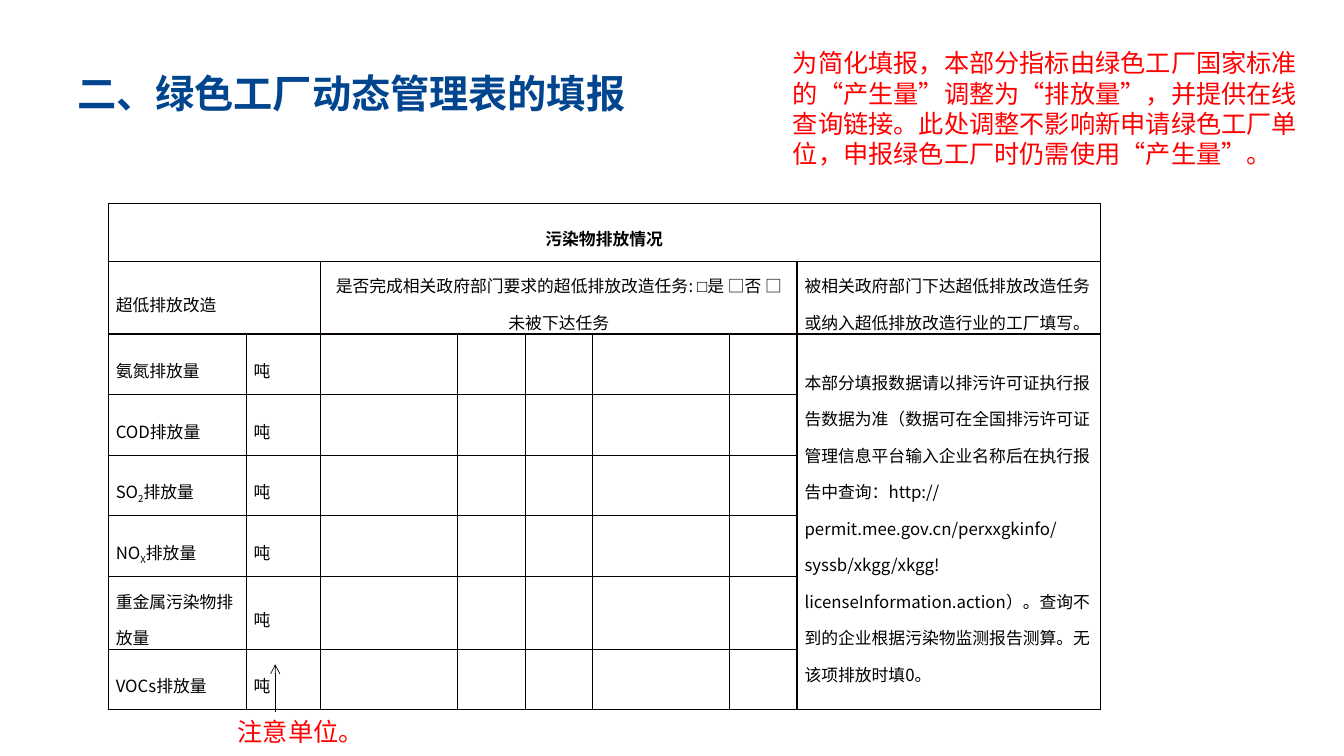
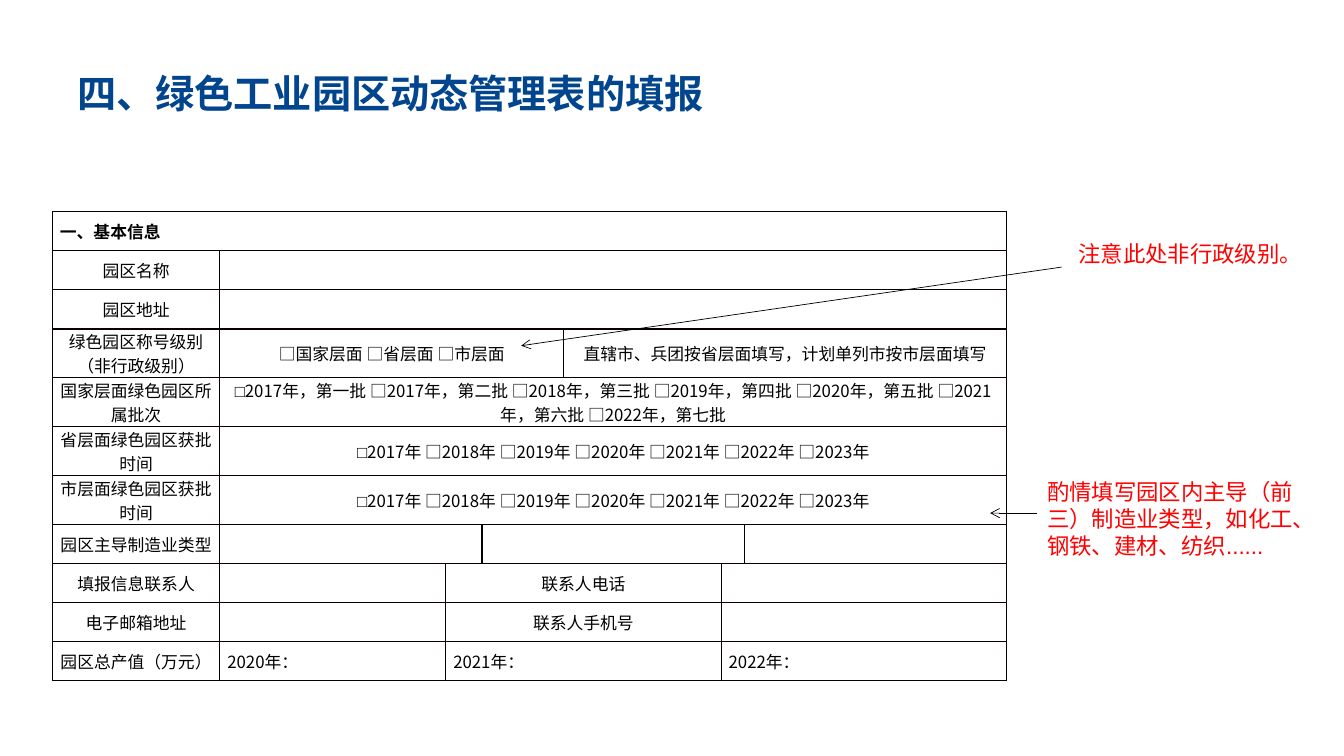
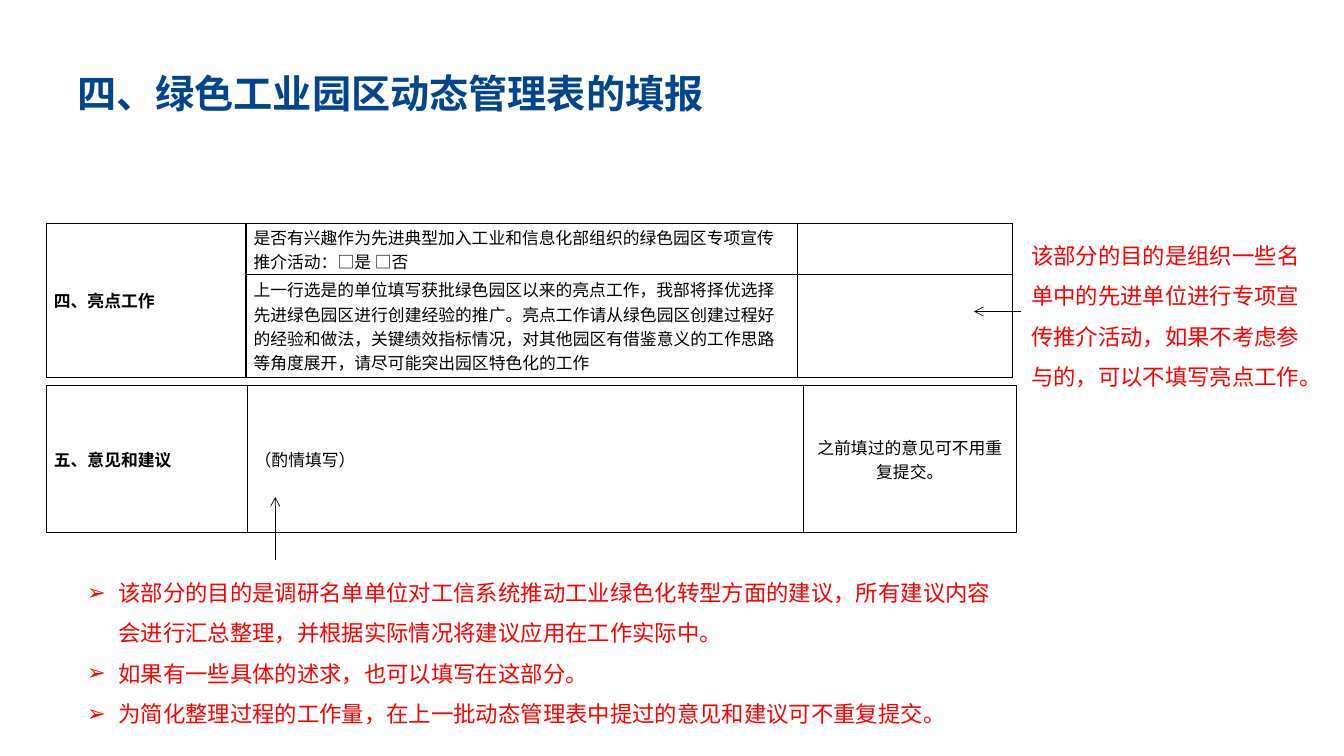
from dataclasses import dataclass
from itertools import groupby

from lxml.etree import SubElement
from pptx import Presentation
from pptx.dml.color import RGBColor
from pptx.enum.shapes import MSO_CONNECTOR
from pptx.enum.text import MSO_ANCHOR, MSO_AUTO_SIZE, PP_ALIGN
from pptx.oxml.ns import qn
from pptx.util import Inches, Pt

# Shared look
W, H = Inches(13.33), Inches(7.5)
BLUE = RGBColor(0x01, 0x45, 0x8E)
RED = RGBColor(0xFF, 0x00, 0x00)
BLACK = RGBColor(0x00, 0x00, 0x00)
BORDER = RGBColor(0x08, 0x00, 0x00)
CJK, LATIN = "Noto Sans CJK SC", "Arial"
BOX = "□"
SUBSCRIPTS = {"₂": "2", "ₓ": "X"}
CENTER = PP_ALIGN.CENTER


@dataclass
class Cell:
    text: str = ""
    cols: int = 1
    rows: int = 1
    align: PP_ALIGN = PP_ALIGN.LEFT
    bold: bool = False


def label(text, cols=1):
    return Cell(text, cols, align=CENTER)


def px(percent):
    """Percent of the slide's width."""
    return int(W * percent / 100)


def py(percent):
    """Percent of the slide's height."""
    return int(H * percent / 100)


def area(x, y, w, h):
    return px(x), py(y), px(w), py(h)


# Text
def style(r, size, color, latin, asian=CJK, bold=False):
    r.font.size, r.font.bold, r.font.name = Pt(size), bold, latin
    r.font.color.rgb = color
    SubElement(r.font._element, qn("a:ea")).set("typeface", asian)


def char_kind(c):
    return "box" if c == BOX else "sub" if c in SUBSCRIPTS else "plain"


def add_cell_runs(p, text, bold):
    for kind, chars in groupby(text, char_kind):
        r = p.add_run()
        r.text = "".join(SUBSCRIPTS.get(c, c) for c in chars)
        style(r, 12, BLACK, LATIN if kind == "box" else CJK, bold=bold)
        if kind == "sub":
            r.font._element.set("baseline", "-25000")


def add_title(s, text):
    tf = s.shapes.add_textbox(*area(5, 4, 90, 16.67)).text_frame
    tf.word_wrap = True
    tf.vertical_anchor = MSO_ANCHOR.MIDDLE
    tf.text = text
    style(tf.paragraphs[0].runs[0], 28, BLUE, CJK, bold=True)


def add_bullet(p):
    pPr = p._p.get_or_add_pPr()
    pPr.set("marL", str(Inches(0.31)))
    pPr.set("indent", str(-Inches(0.31)))
    SubElement(pPr, qn("a:buFont")).set("typeface", LATIN)
    SubElement(pPr, qn("a:buChar")).set("char", "➢")


def add_note(s, at, *lines, size=16, spacing=None, asian=LATIN, bullets=False):
    tf = s.shapes.add_textbox(*area(*at)).text_frame
    tf.word_wrap = True
    tf.auto_size = MSO_AUTO_SIZE.SHAPE_TO_FIT_TEXT
    tf.text = "\n".join(lines)
    for p in tf.paragraphs:
        p.line_spacing = spacing
        if bullets:
            add_bullet(p)
        style(p.runs[0], size, RED, LATIN, asian)


# Arrows
def add_arrow(s, x1, y1, x2, y2):
    line = s.shapes.add_connector(MSO_CONNECTOR.STRAIGHT, px(x1), py(y1), px(x2), py(y2))
    line.line.color.rgb = BLACK
    line.line.width = Pt(0.5)
    SubElement(line.line._get_or_add_ln(), qn("a:tailEnd")).set("type", "arrow")
    SubElement(line._element.spPr, qn("a:effectLst"))


# Tables
def set_borders(cell):
    tcPr = cell._tc.get_or_add_tcPr()
    for side in ("lnL", "lnR", "lnT", "lnB"):
        ln = SubElement(tcPr, qn(f"a:{side}"), w=str(Pt(1)))
        fill = SubElement(ln, qn("a:solidFill"))
        SubElement(fill, qn("a:srgbClr")).set("val", str(BORDER))


def fill_cell(cell, item, spacing):
    p = cell.text_frame.paragraphs[0]
    p.alignment, p.line_spacing = item.align, spacing
    add_cell_runs(p, item.text, item.bold)


def add_form(s, at, col_weights, row_weights, rows, spacing=None):
    x, y, w, h = area(*at)
    table = s.shapes.add_table(len(row_weights), len(col_weights), x, y, w, h).table
    table.first_row = table.horz_banding = False
    for col, weight in zip(table.columns, col_weights):
        col.width = int(w * weight / sum(col_weights))
    for row, weight in zip(table.rows, row_weights):
        row.height = int(h * weight / sum(row_weights))
    for cell in table.iter_cells():
        cell.margin_left = cell.margin_right = Pt(5.4)
        cell.margin_top = cell.margin_bottom = 0
        cell.vertical_anchor = MSO_ANCHOR.MIDDLE
        set_borders(cell)
        cell.fill.background()
    for i, items in enumerate(rows):
        j = 0
        for item in items:
            cell = table.cell(i, j)
            if item.cols > 1 or item.rows > 1:
                cell.merge(table.cell(i + item.rows - 1, j + item.cols - 1))
            fill_cell(cell, item, spacing)
            j += item.cols


# Slides
def pollutant_slide(s):
    add_title(s, "二、绿色工厂动态管理表的填报")
    source = Cell("本部分填报数据请以排污许可证执行报告数据为准（数据可在全国排污许可证管理信息平台输入企业名称后"
                  "在执行报告中查询：http://permit.mee.gov.cn/perxxgkinfo/syssb/xkgg/xkgg!licenseInformation.action）。"
                  "查询不到的企业根据污染物监测报告测算。无该项排放时填0。", rows=6)
    pollutants = ["氨氮", "COD", "SO₂", "NOₓ", "重金属污染物", "VOCs"]
    rows = [
        [Cell("污染物排放情况", 8, align=CENTER, bold=True)],
        [Cell("超低排放改造", 2),
         label("是否完成相关政府部门要求的超低排放改造任务: □是 □否 □未被下达任务", 5),
         Cell("被相关政府部门下达超低排放改造任务或纳入超低排放改造行业的工厂填写。")],
    ]
    rows += [[Cell(f"{name}排放量"), Cell("吨")] for name in pollutants]
    rows[2] += [Cell()] * 5 + [source]
    add_form(s, (8.05, 26.95, 73.82, 66.95),
             [1.37, 0.74, 1.36, 0.67, 0.67, 1.36, 0.67, 3.01],
             [0.57, 0.72] + [0.6] * 4 + [0.72, 0.6], rows, spacing=1.5)
    add_note(s, (16.95, 94.13, 50, 5.33), "注意单位。", size=18)
    add_arrow(s, 20.48, 94.13, 20.48, 87.87)
    add_note(s, (58.26, 5.6, 39.76, 17.47),
             "为简化填报，本部分指标由绿色工厂国家标准的“产生量”调整为“排放量”，并提供在线查询链接。"
             "此处调整不影响新申请绿色工厂单位，申报绿色工厂时仍需使用“产生量”。",
             size=18, spacing=Pt(21.7), asian=CJK)


def park_info_slide(s):
    add_title(s, "四、绿色工业园区动态管理表的填报")
    batch_years = [2017, 2017, 2018, 2019, 2020, 2021, 2022]
    batches = " ".join(f"□{year}年，第{n}批" for year, n in zip(batch_years, "一二三四五六七"))
    years = " ".join(f"□{year}年" for year in range(2017, 2024))
    rows = [
        [Cell("一、基本信息", 7, bold=True)],
        [label("园区名称"), Cell(cols=6)],
        [label("园区地址"), Cell(cols=6)],
        [label("绿色园区称号级别（非行政级别）"), label("□国家层面 □省层面 □市层面", 3),
         label("直辖市、兵团按省层面填写，计划单列市按市层面填写", 3)],
        [label("国家层面绿色园区所属批次"), label(batches, 6)],
        [label("省层面绿色园区获批时间"), label(years, 6)],
        [label("市层面绿色园区获批时间"), label(years, 6)],
        [label("园区主导制造业类型"), Cell(cols=2), Cell(cols=3), Cell()],
        [label("填报信息联系人"), Cell(), label("联系人电话", 3), Cell(cols=2)],
        [label("电子邮箱地址"), Cell(), label("联系人手机号", 3), Cell(cols=2)],
        [label("园区总产值（万元）"), Cell("2020年："), Cell("2021年：", 3), Cell("2022年：", 2)],
    ]
    add_form(s, (3.9, 28, 71, 62.05), [1.66, 2.24, 0.36, 0.81, 1.56, 0.23, 2.6],
             [4] * 3 + [5] * 4 + [4] * 4, rows)
    add_arrow(s, 78.99, 35.33, 38.78, 45.73)
    add_note(s, (79.52, 31.07, 18.9, 4.93), "注意此处非行政级别。")
    add_arrow(s, 77.19, 67.87, 73.67, 67.87)
    add_note(s, (77.19, 62.6, 22.81, 12.13),
             "酌情填写园区内主导（前三）制造业类型，如化工、钢铁、建材、纺织......")


def park_feedback_slide(s):
    add_title(s, "四、绿色工业园区动态管理表的填报")
    add_form(s, (3.45, 29.6, 71.87, 20.35), [1.98, 5.47, 2.13], [0.5, 1.02], [
        [Cell("四、亮点工作", rows=2, bold=True),
         Cell("是否有兴趣作为先进典型加入工业和信息化部组织的绿色园区专项宣传推介活动：□是 □否")],
        [Cell(),
         Cell("上一行选是的单位填写获批绿色园区以来的亮点工作，我部将择优选择先进绿色园区进行创建经验的推广。"
              "亮点工作请从绿色园区创建过程好的经验和做法，关键绩效指标情况，对其他园区有借鉴意义的工作思路"
              "等角度展开，请尽可能突出园区特色化的工作")],
    ])
    add_form(s, (3.45, 51, 72.17, 19.47), [1.99, 5.51, 2.11], [1], [
        [Cell("五、意见和建议", bold=True), Cell("（酌情填写）"), label("之前填过的意见可不用重复提交。")],
    ])
    add_arrow(s, 20.48, 74.13, 20.48, 65.73)
    add_note(s, (75.99, 29.6, 22.66, 22.93),
             "该部分的目的是组织一些名单中的先进单位进行专项宣传推介活动，如果不考虑参与的，可以不填写亮点工作。",
             spacing=1.5)
    add_arrow(s, 75.99, 41.2, 72.47, 41.2)
    add_note(s, (5.75, 74.2, 69.47, 22.93),
             "该部分的目的是调研名单单位对工信系统推动工业绿色化转型方面的建议，所有建议内容会进行汇总整理，"
             "并根据实际情况将建议应用在工作实际中。",
             "如果有一些具体的述求，也可以填写在这部分。",
             "为简化整理过程的工作量，在上一批动态管理表中提过的意见和建议可不重复提交。",
             spacing=1.5, bullets=True)


def main():
    prs = Presentation()
    prs.slide_width, prs.slide_height = W, H
    for build in (pollutant_slide, park_info_slide, park_feedback_slide):
        build(prs.slides.add_slide(prs.slide_layouts[6]))
    prs.save("out.pptx")


if __name__ == "__main__":
    main()
